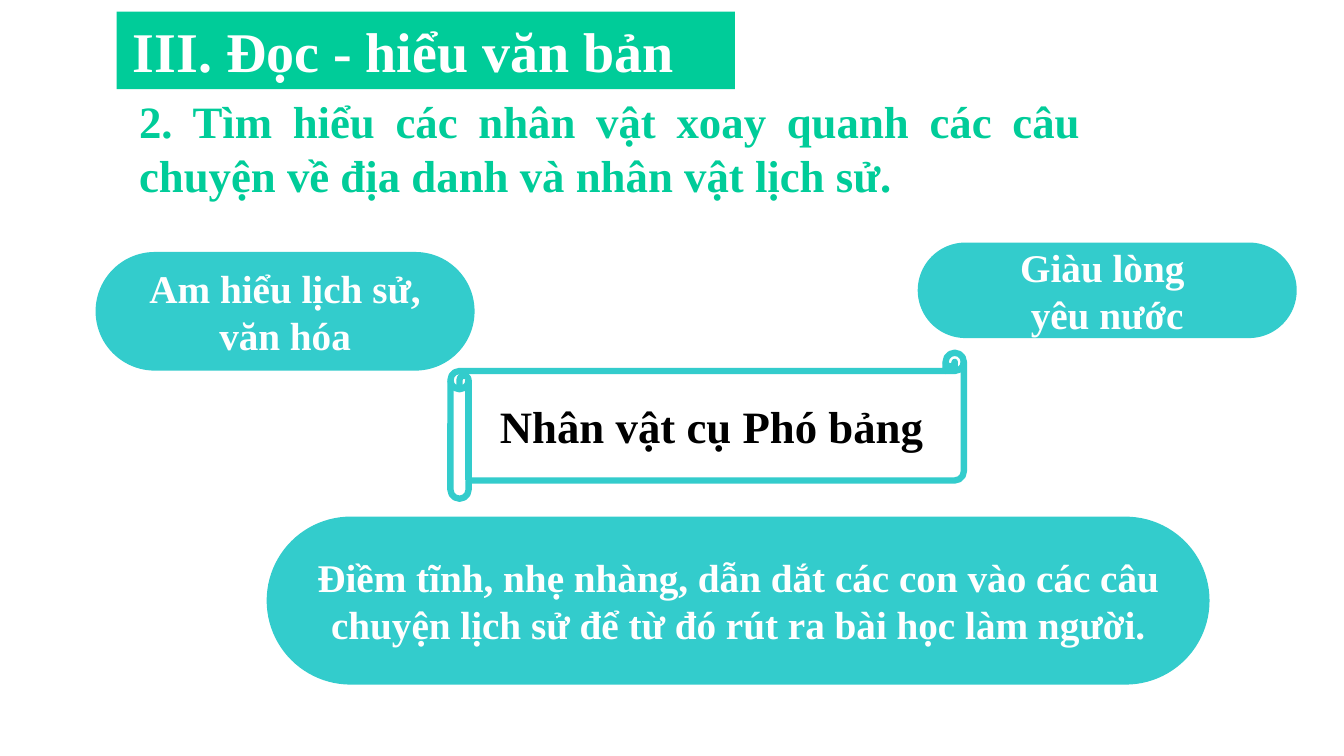
from pptx import Presentation
from pptx.dml.color import RGBColor
from pptx.enum import shapes, text
from pptx.util import Pt

PX = 9525  # 1280 x 720 px slide
GREEN = RGBColor(0x00, 0xCC, 0x99)
TEAL = RGBColor(0x33, 0xCC, 0xCC)
WHITE = RGBColor(0xFF, 0xFF, 0xFF)
BLACK = RGBColor(0x00, 0x00, 0x00)
FONT = "Times New Roman"
SHAPE, ALIGN, ANCHOR = shapes.MSO_SHAPE, text.PP_ALIGN, text.MSO_ANCHOR

TRAITS = [
    ((91, 240, 361, 113), ["Am hiểu lịch sử, văn hóa"]),
    ((874, 231, 361, 91), ["Giàu lòng ", "yêu nước"]),
    ((254, 492, 898, 160),
     ["Điềm tĩnh, nhẹ nhàng, dẫn dắt các con vào các câu chuyện lịch sử "
      "để từ đó rút ra bài học làm người."]),
]


def emu(box):
    return [v * PX for v in box]


def write(sp, lines, size, color, align=ALIGN.CENTER, anchor=ANCHOR.MIDDLE):
    tf = sp.text_frame
    tf.word_wrap = True
    tf.auto_size = text.MSO_AUTO_SIZE.NONE
    tf.vertical_anchor = anchor
    for i, line in enumerate(lines):
        p = tf.add_paragraph() if i else tf.paragraphs[0]
        p.alignment = align
        p.line_spacing = 1.0
        p.space_before = Pt(0)
        r = p.add_run()
        r.text = line
        r.font.name, r.font.size, r.font.bold = FONT, Pt(size), True
        r.font.color.rgb = color


def add_title(s, box):
    sp = s.shapes.title
    sp.left, sp.top, sp.width, sp.height = emu(box)
    sp.fill.solid()
    sp.fill.fore_color.rgb = GREEN
    write(sp, ["III. Đọc - hiểu văn bản"], 40, WHITE, ALIGN.JUSTIFY, ANCHOR.TOP)
    sp.text_frame.paragraphs[0]._p.get_or_add_pPr().set("indent", str(6 * PX))


def add_subtitle(s, box):
    sp = s.shapes.add_textbox(*emu(box))
    write(sp, ["2. Tìm hiểu các nhân vật xoay quanh các câu chuyện "
               "về địa danh và nhân vật lịch sử."],
          32, GREEN, ALIGN.JUSTIFY, ANCHOR.TOP)


def add_scroll(s, box):
    sp = s.shapes.add_shape(SHAPE.HORIZONTAL_SCROLL, *emu(box))
    sp.shadow.inherit = False
    sp.fill.background()
    sp.line.color.rgb = TEAL
    sp.line.width = Pt(4.5)
    write(sp, ["Nhân vật cụ Phó bảng"], 32, BLACK)


def add_trait(s, box, lines):
    sp = s.shapes.add_shape(SHAPE.ROUNDED_RECTANGLE, *emu(box))
    sp.adjustments[0] = 0.5
    sp.shadow.inherit = False
    sp.fill.solid()
    sp.fill.fore_color.rgb = TEAL
    sp.line.fill.background()
    write(sp, lines, 28, WHITE)


def main():
    prs = Presentation()
    prs.slide_width, prs.slide_height = 1280 * PX, 720 * PX
    s = prs.slides.add_slide(prs.slide_layouts.get_by_name("Title Only"))
    add_title(s, (111, 11, 589, 74))
    add_subtitle(s, (123, 85, 916, 113))
    add_scroll(s, (429, 336, 489, 139))
    for box, lines in TRAITS:
        add_trait(s, box, lines)
    prs.save("out.pptx")


if __name__ == "__main__":
    main()
